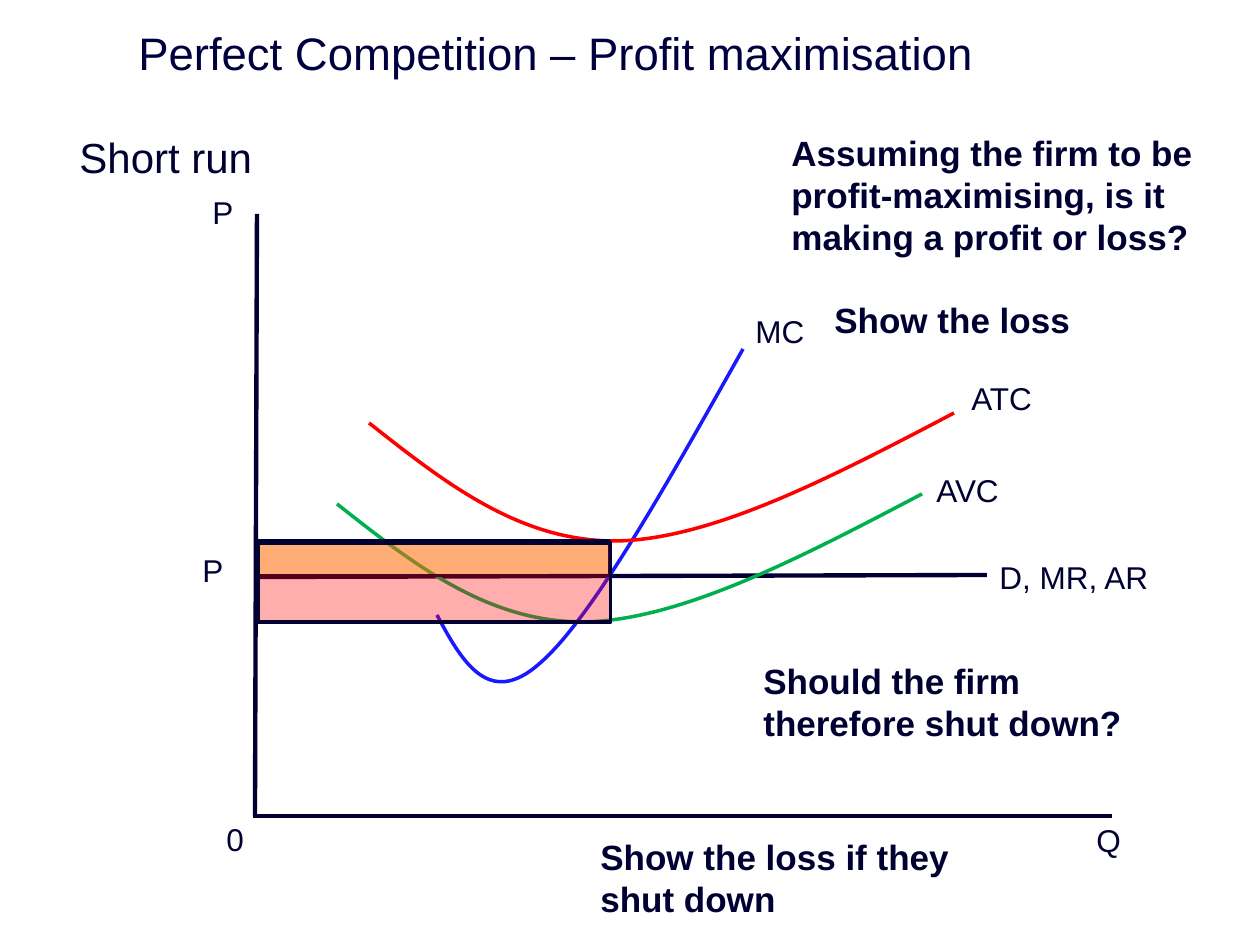
from lxml import etree
from pptx import Presentation
from pptx.dml.color import RGBColor
from pptx.enum.shapes import MSO_CONNECTOR, MSO_SHAPE
from pptx.enum.text import MSO_ANCHOR, MSO_AUTO_SIZE
from pptx.oxml.ns import qn
from pptx.util import Pt

LINE, RECT = MSO_CONNECTOR.STRAIGHT, MSO_SHAPE.RECTANGLE
MIDDLE, FIT = MSO_ANCHOR.MIDDLE, MSO_AUTO_SIZE.SHAPE_TO_FIT_TEXT
EMU_PER_PX = 914400 / 126
NAVY, TITLE = "000032", "00003E"


def px(*values):
    return [round(v * EMU_PER_PX) for v in values]


def color(target, value):
    target.rgb = RGBColor.from_string(value)


prs = Presentation()
prs.slide_width, prs.slide_height = px(1260, 945)
s = prs.slides.add_slide(prs.slide_layouts[6])

# Axes and demand line
for ends in [(257, 214, 255, 816), (1112, 816, 253, 816), (260, 577, 987, 575)]:
    line = s.shapes.add_connector(LINE, *px(*ends))
    line.line.width = Pt(2.5)
    color(line.line.color, NAVY)
    etree.SubElement(line._element.spPr, qn("a:effectLst"))

# Cost curves: a start point, then two cubic segments of three points each
mc = [(437, 615), (462, 662), (489, 708), (539, 664), (591, 620), (667, 484), (743, 349)]
atc = [(369, 423), (445, 483), (520, 542), (617, 541), (714, 539), (834, 476), (954, 413)]
avc = [(x - 32, y + 81) for x, y in atc]
for points, bottom, hue in [(mc, 682, "1919FF"), (atc, 541, "FF0000"), (avc, 622, "00B050")]:
    start, *rest = [px(*pt) for pt in points]
    builder = s.shapes.build_freeform(*start)
    builder.add_line_segments(rest, close=False)
    sp = builder.convert_to_shape()
    sp.shadow.inherit = False
    sp.fill.background()
    sp.line.width = Pt(2)
    color(sp.line.color, hue)
    path = sp._element.find(".//" + qn("a:path"))
    segments = path.findall(qn("a:lnTo"))
    for i in range(0, len(segments), 3):
        cubic = etree.SubElement(path, qn("a:cubicBezTo"))
        for segment in segments[i:i + 3]:
            cubic.append(segment[0])
            path.remove(segment)
    # The frame ends at the lowest point of the curve, not of its controls
    sp.height = px(bottom)[0] - sp.top
    path.set("h", str(sp.height))

# Texts: wording, left, top, width, height, size, bold, colour
texts = [
    ("Perfect Competition – Profit maximisation", 126, 20, 1134, 64, 26, False, TITLE),
    ("Short run", 67, 125, 1113, 624, 24, False, NAVY),
    ("Q", 1084, 815, 81, 50, 18, False, NAVY),
    ("0", 214, 814, 81, 50, 18, False, NAVY),
    ("P", 200, 187, 81, 50, 18, False, NAVY),
    ("P", 190, 545, 69, 50, 18, False, NAVY),
    ("D, MR, AR", 987, 552, 195, 50, 18, False, NAVY),
    ("MC", 743, 306, 77, 50, 18, False, NAVY),
    ("ATC", 959, 373, 113, 50, 18, False, NAVY),
    ("AVC", 924, 465, 113, 50, 18, False, NAVY),
    ("Show the loss", 822, 292, 441, 55, 20, True, NAVY),
    ("Assuming the firm to be profit-maximising, is it making a profit or loss?",
     779, 125, 441, 140, 20, True, NAVY),
    ("Should the firm therefore shut down?", 751, 653, 441, 97, 20, True, NAVY),
    ("Show the loss if they shut down", 588, 829, 441, 97, 20, True, NAVY),
]
for text, x, y, w, h, size, bold, hue in texts:
    tf = s.shapes.add_textbox(*px(x, y, w, h)).text_frame
    tf.text = text
    tf.word_wrap = True
    if size == 26:
        tf.vertical_anchor = MIDDLE
    elif size != 24:
        tf.auto_size = FIT
    font = tf.paragraphs[0].runs[0].font
    font.name, font.size, font.bold = "Arial", Pt(size), bold
    color(font.color, hue)

# Loss areas, see-through
for x, y, w, h, hue in [(258, 541, 352, 35, "FFFF00"), (259, 543, 352, 79, "FF0000")]:
    sp = s.shapes.add_shape(RECT, *px(x, y, w, h))
    sp.shadow.inherit = False
    sp.fill.solid()
    color(sp.fill.fore_color, hue)
    fill = sp._element.spPr.find(".//" + qn("a:srgbClr"))
    etree.SubElement(fill, qn("a:alpha"), val="32000")
    sp.line.width = Pt(1.75)
    color(sp.line.color, NAVY)

prs.save("out.pptx")
